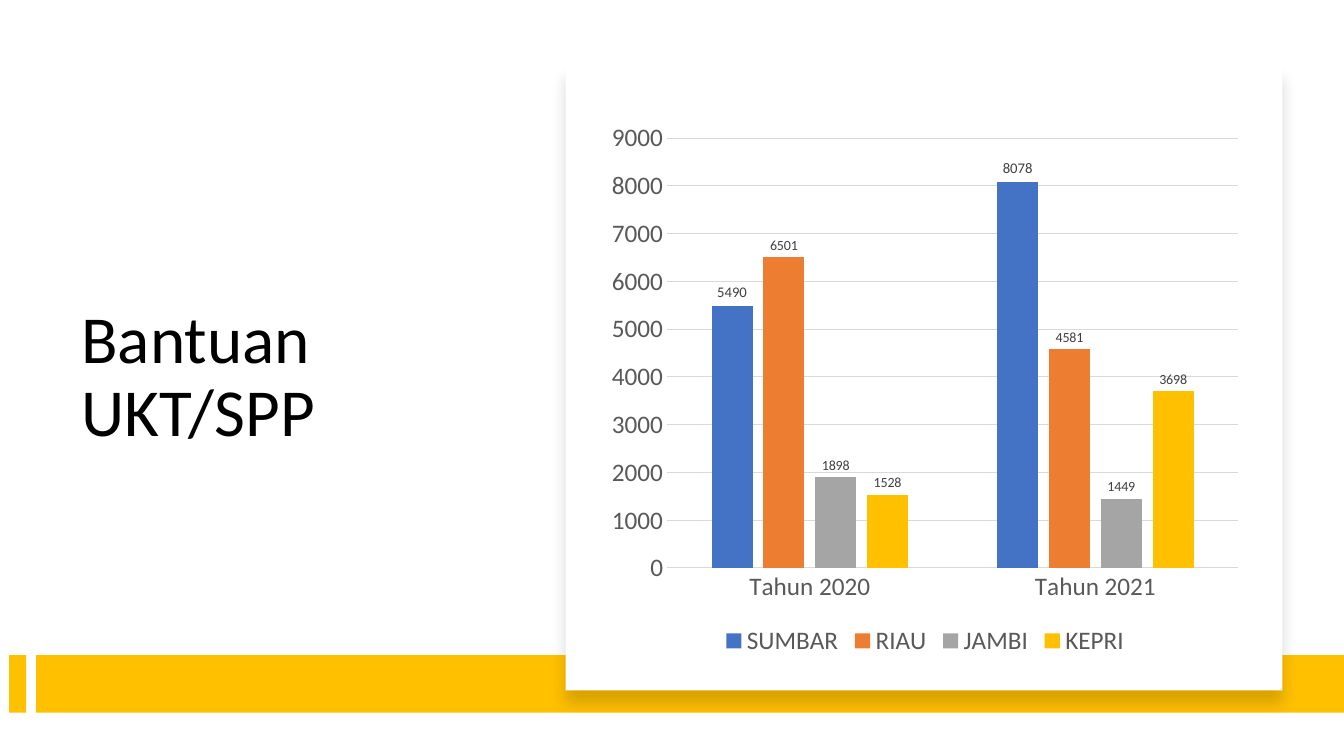
"""Build the Bantuan UKT/SPP slide with a clustered column chart."""
import pptx
import pptx.chart.data
import pptx.dml.color
import pptx.enum.chart
import pptx.enum.shapes
import pptx.enum.text
import pptx.oxml
import pptx.oxml.ns
import pptx.util
from pptx.util import Inches

FONT = "Calibri"
GOLD = "FFC000"
GREY = "595959"
RULE = "D9D9D9"
CATEGORIES = ["Tahun 2020", "Tahun 2021"]
SERIES = [
    ("SUMBAR", (5490, 8078), "4472C4", 10.5),
    ("RIAU", (6501, 4581), "ED7D31", 10),
    ("JAMBI", (1898, 1449), "A5A5A5", 10),
    ("KEPRI", (1528, 3698), GOLD, 10),
]


def rgb(value):
    return pptx.dml.color.RGBColor.from_string(value)


def set_font(font, size, color):
    font.name = FONT
    font.size = pptx.util.Pt(size)
    font.color.rgb = rgb(color)


def set_line(line, color, width=0.75):
    line.color.rgb = rgb(color)
    line.width = pptx.util.Pt(width)


def write(tf, text, size=18, color="000000", spacing=1.0):
    p = tf.paragraphs[0]
    p.line_spacing = spacing
    r = p.add_run()
    r.text = text
    set_font(r.font, size, color)


class SlideBuilder:
    def __init__(self, prs):
        self.s = prs.slides.add_slide(prs.slide_layouts[6])
        self.s.background.fill.solid()
        self.s.background.fill.fore_color.rgb = rgb("FFFFFF")

    def title(self, text, x, y, w, h):
        tf = self.s.shapes.add_textbox(Inches(x), Inches(y), Inches(w), Inches(h)).text_frame
        tf.word_wrap = True
        tf.vertical_anchor = pptx.enum.text.MSO_ANCHOR.MIDDLE
        write(tf, text, size=48, spacing=0.9)

    def rect(self, x, y, w, h, fill):
        sp = self.s.shapes.add_shape(pptx.enum.shapes.MSO_SHAPE.RECTANGLE,
                                     Inches(x), Inches(y), Inches(w), Inches(h))
        sp.shadow.inherit = False
        sp.fill.solid()
        sp.fill.fore_color.rgb = rgb(fill)
        sp.line.fill.background()
        return sp

    def card(self, x, y, w, h):
        sp = self.rect(x, y, w, h, "FFFFFF")
        effects = sp.element.spPr.find(pptx.oxml.ns.qn("a:effectLst"))
        effects.append(pptx.oxml.parse_xml(
            f'<a:outerShdw {pptx.oxml.ns.nsdecls("a")} blurRad="139700" dist="127000" '
            'dir="5400000" algn="t" rotWithShape="0"><a:srgbClr val="000000">'
            '<a:alpha val="15000"/></a:srgbClr></a:outerShdw>'))

    def column_chart(self, x, y, w, h):
        data = pptx.chart.data.CategoryChartData()
        data.categories = CATEGORIES
        for name, values, _, _ in SERIES:
            data.add_series(name, values)
        enums = pptx.enum.chart
        chart = self.s.shapes.add_chart(enums.XL_CHART_TYPE.COLUMN_CLUSTERED, Inches(x), Inches(y),
                                        Inches(w), Inches(h), data).chart
        set_font(chart.font, 18, "000000")
        chart.has_title = False
        chart.has_legend = True
        chart.legend.position = enums.XL_LEGEND_POSITION.BOTTOM
        chart.legend.include_in_layout = False
        set_font(chart.legend.font, 18, GREY)
        for axis in (chart.category_axis, chart.value_axis):
            axis.major_tick_mark = axis.minor_tick_mark = enums.XL_TICK_MARK.NONE
            set_font(axis.tick_labels.font, 18, GREY)
        set_line(chart.category_axis.format.line, RULE)
        chart.value_axis.format.line.fill.background()
        set_line(chart.value_axis.major_gridlines.format.line, RULE)
        plot = chart.plots[0]
        plot.vary_by_categories = False
        plot.gap_width = 219
        plot.overlap = -27
        for series, (_, _, color, label_size) in zip(plot.series, SERIES):
            series.format.fill.solid()
            series.format.fill.fore_color.rgb = rgb(color)
            series.invert_if_negative = False
            labels = series.data_labels
            labels.show_value = True
            labels.position = enums.XL_LABEL_POSITION.OUTSIDE_END
            set_font(labels.font, label_size, "404040")


def main():
    prs = pptx.Presentation()
    prs.slide_width = Inches(13.33)
    prs.slide_height = Inches(7.5)
    slide = SlideBuilder(prs)
    slide.title("Bantuan UKT/SPP", 0.71, 1.2, 4.15, 5.1)
    for x, w in ((0.09, 0.17), (0.36, 12.97)):
        slide.rect(x, 6.5, w, 0.57, GOLD)
    slide.card(5.61, 0.64, 7.11, 6.21)
    slide.column_chart(5.94, 1.11, 6.47, 5.45)
    prs.save("out.pptx")


if __name__ == "__main__":
    main()
